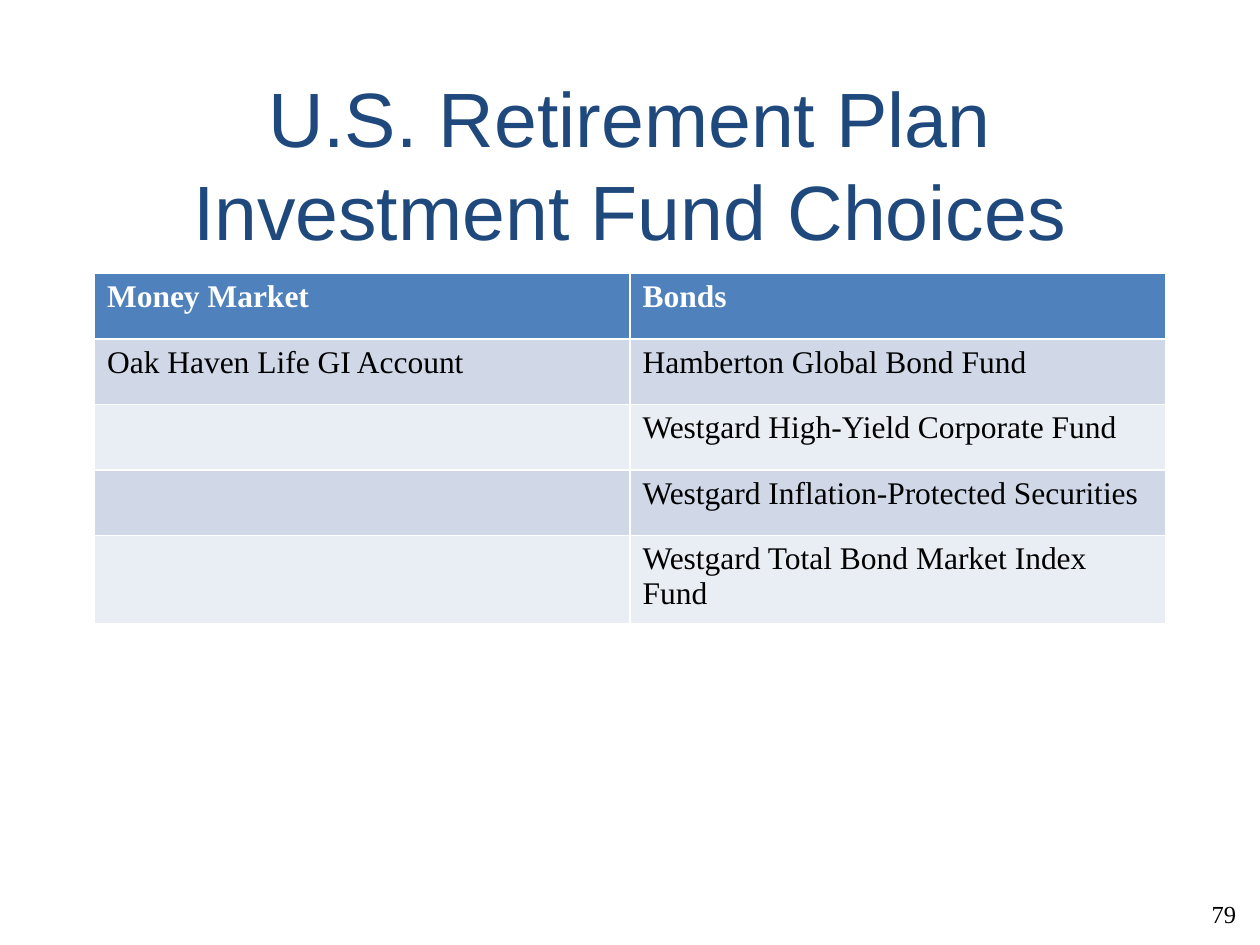
from pptx import Presentation
from pptx.dml.color import RGBColor
from pptx.enum.text import MSO_ANCHOR, MSO_AUTO_SIZE, PP_ALIGN
from pptx.util import Inches, Pt

MIDDLE = MSO_ANCHOR.MIDDLE
GROW = MSO_AUTO_SIZE.SHAPE_TO_FIT_TEXT
FIXED = MSO_AUTO_SIZE.NONE
LEFT, CENTER, RIGHT = PP_ALIGN.LEFT, PP_ALIGN.CENTER, PP_ALIGN.RIGHT
SANS, SERIF = "Arial", "Times New Roman"
BLACK, WHITE, NAVY, BLUE = "000000", "FFFFFF", "1F497D", "4F81BD"
BANDS = ["E9EDF4", "D0D8E8"]
FUNDS = [
    ("Money Market", "Bonds"),
    ("Oak Haven Life GI Account", "Hamberton Global Bond Fund"),
    ("", "Westgard High-Yield Corporate Fund"),
    ("", "Westgard Inflation-Protected Securities"),
    ("", "Westgard Total Bond Market Index Fund"),
]


def color(code):
    return RGBColor.from_string(code)


def write(frame, text, size, face, code, align, bold=False):
    para = frame.paragraphs[0]
    para.alignment = align
    run = para.add_run()
    run.text = text
    font = run.font
    font.size, font.name, font.bold = Pt(size), face, bold
    font.color.rgb = color(code)


def add_title(slide, text):
    title = slide.shapes.title
    title.left, title.top = Inches(0.75), Inches(0.67)
    title.width, title.height = Inches(8.5), Inches(1.25)
    frame = title.text_frame
    frame.word_wrap = True
    frame.auto_size = FIXED
    frame.vertical_anchor = MIDDLE
    write(frame, text, 44, SANS, NAVY, CENTER)


def add_funds(slide, data):
    count = len(data)
    table = slide.shapes.add_table(
        count, 2, Inches(0.75), Inches(2.17), Inches(8.5), Inches(0.52 * count)
    ).table
    for row, names in enumerate(data):
        head = row == 0
        for col, name in enumerate(names):
            cell = table.cell(row, col)
            cell.fill.solid()
            cell.fill.fore_color.rgb = color(BLUE if head else BANDS[row % 2])
            if name:
                ink = WHITE if head else BLACK
                write(cell.text_frame, name, 18, SERIF, ink, LEFT, head)


def add_page(slide, text):
    box = slide.shapes.add_textbox(
        Inches(9.48), Inches(7.09), Inches(0.43), Inches(0.33)
    )
    frame = box.text_frame
    frame.word_wrap = False
    frame.auto_size = GROW
    frame.vertical_anchor = MIDDLE
    write(frame, text, 14, SERIF, BLACK, RIGHT)


def main():
    deck = Presentation()
    deck.slide_width, deck.slide_height = Inches(10), Inches(7.5)
    slide = deck.slides.add_slide(deck.slide_layouts[5])
    add_page(slide, "79")
    add_title(slide, "U.S. Retirement Plan Investment Fund Choices")
    add_funds(slide, FUNDS)
    deck.save("out.pptx")


if __name__ == "__main__":
    main()
